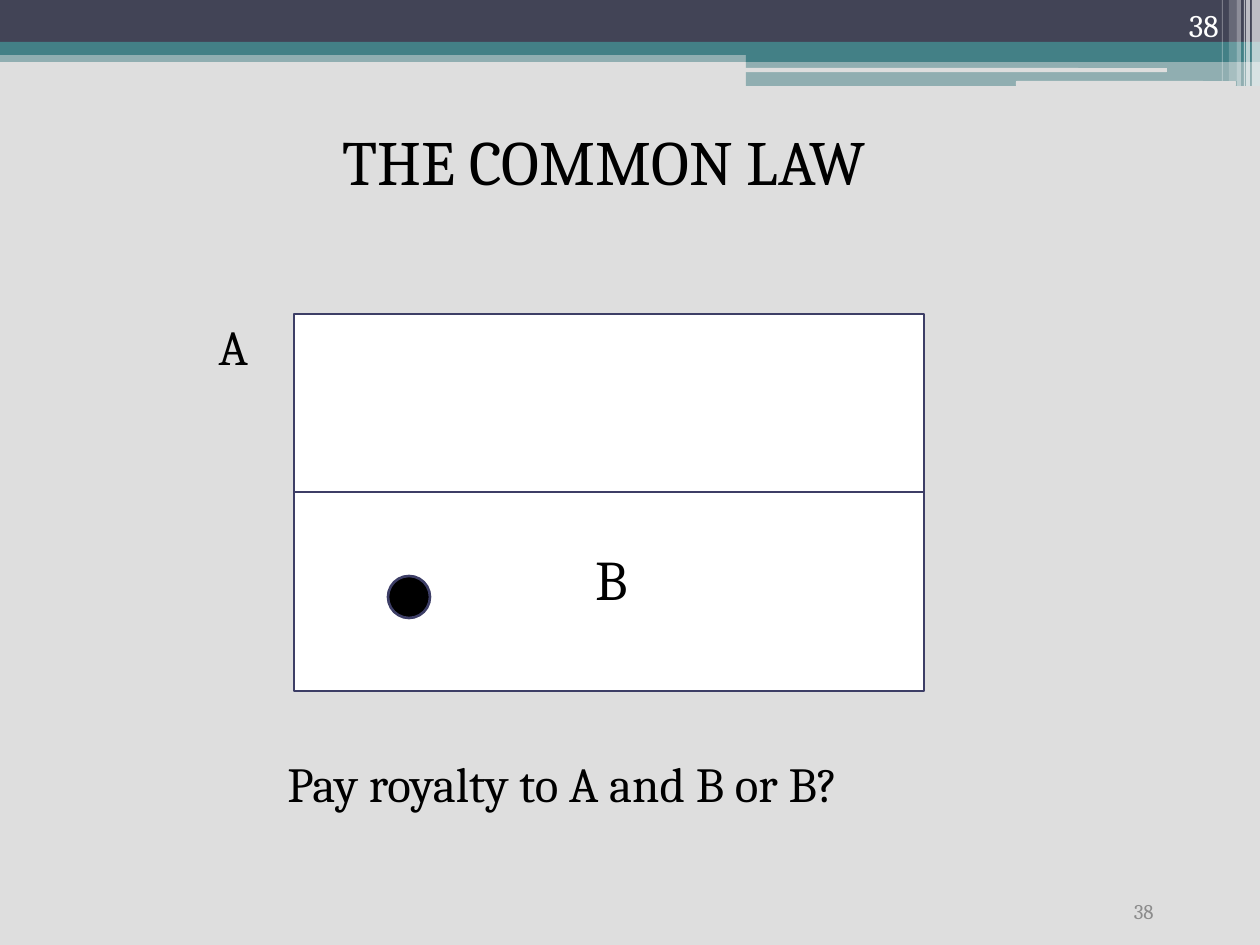
from typing import NamedTuple

from lxml import etree
from pptx import Presentation
from pptx.dml.color import RGBColor
from pptx.enum.shapes import MSO_SHAPE
from pptx.enum.text import MSO_ANCHOR, MSO_AUTO_SIZE, PP_ALIGN
from pptx.oxml.ns import qn
from pptx.util import Emu, Pt

RECT, ROUND, OVAL = MSO_SHAPE.RECTANGLE, MSO_SHAPE.ROUNDED_RECTANGLE, MSO_SHAPE.OVAL
LEFT, CENTER, RIGHT = PP_ALIGN.LEFT, PP_ALIGN.CENTER, PP_ALIGN.RIGHT
TOP, MIDDLE, BOTTOM = MSO_ANCHOR.TOP, MSO_ANCHOR.MIDDLE, MSO_ANCHOR.BOTTOM
NO_FIT = MSO_AUTO_SIZE.NONE

PX = 914400 // 126
FONT = "Cambria"
GREY, NAVY, TEAL = "DEDEDE", "424456", "438086"
WHITE, BLACK, OUTLINE, MUTED = "FFFFFF", "000000", "3D3E66", "8C8C8C"


class Box(NamedTuple):
    x: int
    y: int
    w: int
    h: int


class Part(NamedTuple):
    box: Box
    fill: str
    opacity: int = 100
    kind: int = RECT
    line: str = ""


class Label(NamedTuple):
    box: Box
    text: str
    size: int
    color: str = BLACK
    align: int = LEFT
    anchor: int = TOP


def px(n: int) -> Emu:
    return Emu(n * PX)


def rgb(value: str) -> RGBColor:
    return RGBColor.from_string(value)


def place(sp, box: Box) -> None:
    sp.left, sp.top, sp.width, sp.height = (px(n) for n in box)


def draw_part(shapes, part: Part) -> None:
    sp = shapes.add_shape(part.kind, *(px(n) for n in part.box))
    sp.shadow.inherit = False
    sp.fill.solid()
    sp.fill.fore_color.rgb = rgb(part.fill)
    if part.opacity < 100:
        color = sp.fill._xPr.find(qn("a:solidFill"))[0]
        etree.SubElement(color, qn("a:alpha"), val=str(part.opacity * 1000))
    if part.line:
        sp.line.color.rgb = rgb(part.line)
        sp.line.width = Pt(1.5)
    else:
        sp.line.fill.background()


def style(p, size: int, color: str, align: int) -> None:
    p.alignment = align
    for r in p.runs:
        r.font.name, r.font.size = FONT, Pt(size)
        r.font.color.rgb = rgb(color)


def write_label(sp, label: Label) -> None:
    place(sp, label.box)
    tf = sp.text_frame
    tf.text = label.text
    tf.word_wrap, tf.auto_size = True, NO_FIT
    tf.vertical_anchor = label.anchor
    style(tf.paragraphs[0], label.size, label.color, label.align)


def write_owners(sp) -> None:
    """Write the two owner letters, each indented to its tract."""
    place(sp, Box(32, 229, 1134, 624))
    tf = sp.text_frame
    tf.text = "A\nB"
    tf.auto_size, tf.vertical_anchor = NO_FIT, TOP
    tf.margin_top = px(87)
    for p, size, indent, gap in zip(tf.paragraphs, (28, 32), (174, 551), (0, 97)):
        style(p, size, BLACK, LEFT)
        p.space_before = Pt(gap)
        pPr = p._p.get_or_add_pPr()
        pPr.set("marL", str(px(indent)))
        pPr.set("indent", "0")
        etree.SubElement(pPr, qn("a:buNone"))


# Header bands, light rules and the stripes at the right edge
HEADER = [
    Part(Box(0, 50, 1260, 12), TEAL, 50),
    Part(Box(0, 0, 1260, 43), NAVY),
    Part(Box(0, 42, 1260, 13), TEAL),
    Part(Box(746, 49, 514, 13), TEAL),
    Part(Box(746, 61, 514, 25), TEAL, 50),
    Part(Box(745, 68, 422, 4), GREY, kind=ROUND),
    Part(Box(1016, 81, 220, 5), GREY, kind=ROUND),
] + [
    Part(Box(x, 0, w, h), WHITE, opacity)
    for x, w, h, opacity in (
        (1252, 8, 86, 65), (1246, 4, 86, 65), (1244, 1, 86, 60),
        (1237, 4, 86, 40), (1229, 8, 81, 20), (1222, 1, 81, 30),
    )
]

# Two stacked tracts and the well
TRACTS = [
    Part(Box(294, 492, 630, 199), WHITE, line=OUTLINE),
    Part(Box(294, 314, 630, 178), WHITE, line=OUTLINE),
    Part(Box(388, 576, 42, 42), BLACK, kind=OVAL, line=OUTLINE),
]

TITLE = Label(Box(84, 116, 1040, 89), "THE COMMON LAW", 36, align=CENTER)
LABELS = [
    Label(Box(872, 886, 294, 50), "38", 12, MUTED, RIGHT, MIDDLE),
    Label(Box(1126, 0, 105, 50), "38", 18, WHITE, RIGHT, BOTTOM),
    Label(Box(275, 747, 786, 72), "Pay royalty to A and B or B?", 28),
]


def main() -> None:
    prs = Presentation()
    prs.slide_width, prs.slide_height = px(1260), px(945)
    s = prs.slides.add_slide(prs.slide_layouts[1])
    s.background.fill.solid()
    s.background.fill.fore_color.rgb = rgb(GREY)
    title, body = s.placeholders

    for part in HEADER + TRACTS:
        draw_part(s.shapes, part)
    write_label(title, TITLE)
    write_owners(body)
    # The owner letters lie over the tracts
    s.shapes.element.append(body.element)
    for label in LABELS:
        write_label(s.shapes.add_textbox(0, 0, 0, 0), label)

    prs.save("out.pptx")


if __name__ == "__main__":
    main()
